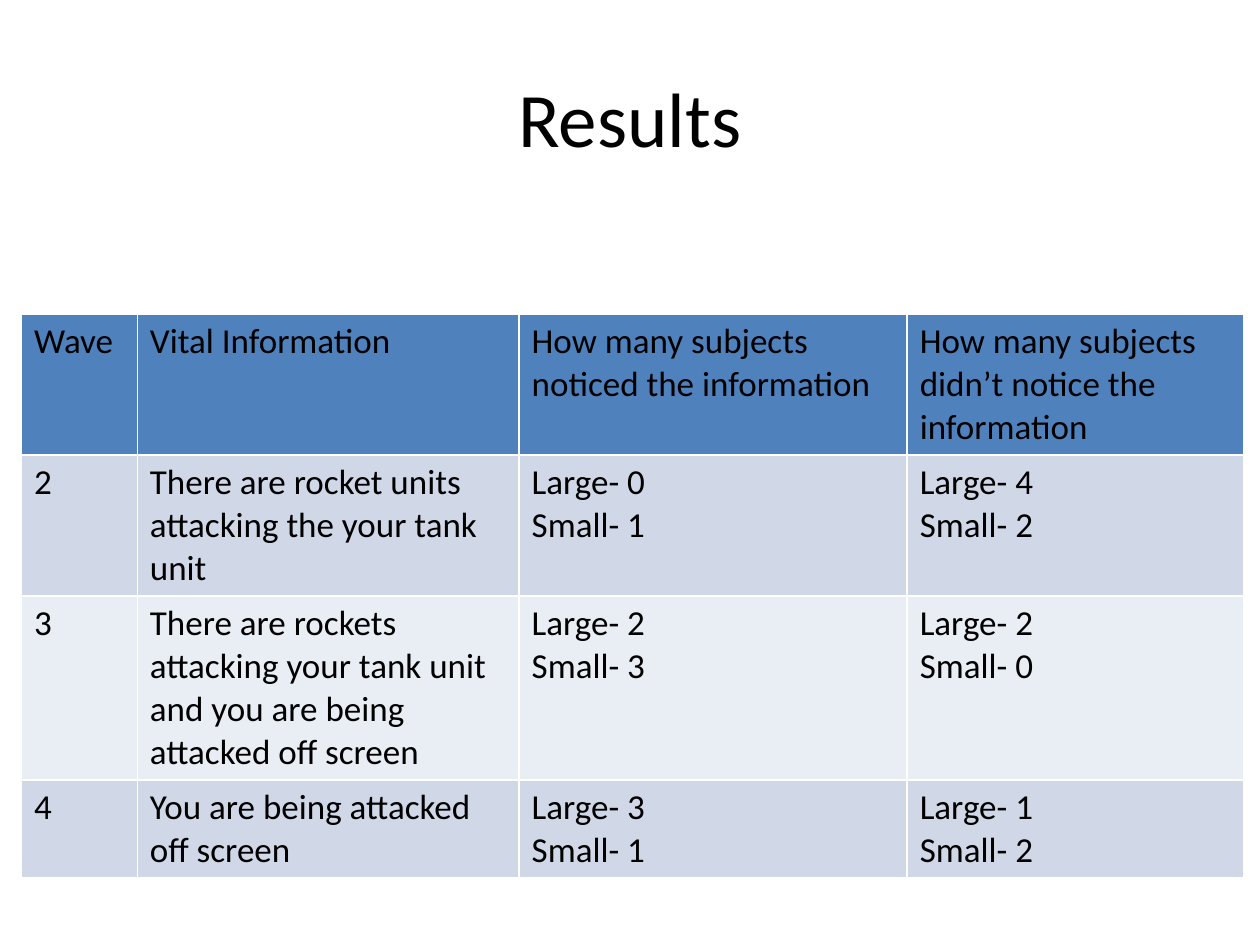
from lxml.etree import SubElement as Sub
from pptx import Presentation
from pptx.dml.color import RGBColor
from pptx.enum.text import MSO_ANCHOR as Anchor, PP_ALIGN as Align
from pptx.oxml.ns import qn
from pptx.util import Inches, Pt

COLS = [0.92, 3.03, 3.08, 2.67]
ROWS = [1.12, 1.12, 1.46, 0.78]
HEAD = "4F81BD"
BANDS = ["D0D8E8", "E9EDF4"]
DATA = [
    ["Wave", "Vital Information", "How many subjects noticed the information",
     "How many subjects didn’t notice the information"],
    ["2", "There are rocket units attacking the your tank unit",
     "Large- 0\nSmall- 1", "Large- 4\nSmall- 2"],
    ["3", "There are rockets attacking your tank unit and you are being attacked off screen",
     "Large- 2\nSmall- 3", "Large- 2\nSmall- 0"],
    ["4", "You are being attacked off screen",
     "Large- 3\nSmall- 1", "Large- 1\nSmall- 2"],
]


def color(code):
    return RGBColor.from_string(code)


def write(frame, text, size=20, align=Align.LEFT, ink="000000"):
    frame.word_wrap = True
    frame.text = text
    for par in frame.paragraphs:
        par.alignment = align
        for run in par.runs:
            font = run.font
            font.name, font.size, font.bold = "Calibri", Pt(size), False
            font.color.rgb = color(ink)


def border(cell, ink="FFFFFF", width=1):
    props = cell._tc.get_or_add_tcPr()
    for side in "LRTB":
        line = Sub(props, qn(f"a:ln{side}"), w=str(Pt(width)))
        fill = Sub(line, qn("a:solidFill"))
        Sub(fill, qn("a:srgbClr"), val=ink)


def title(slide, box, text):
    frame = slide.shapes.add_textbox(*map(Inches, box)).text_frame
    write(frame, text, size=44, align=Align.CENTER)
    frame.vertical_anchor = Anchor.MIDDLE


def grid(slide, box, data):
    table = slide.shapes.add_table(len(data), len(data[0]), *map(Inches, box)).table
    for col, width in zip(table.columns, COLS):
        col.width = Inches(width)
    for r, (row, height) in enumerate(zip(data, ROWS)):
        table.rows[r].height = Inches(height)
        for c, text in enumerate(row):
            cell = table.cell(r, c)
            write(cell.text_frame, text)
            border(cell)
            cell.fill.solid()
            cell.fill.fore_color.rgb = color(BANDS[(r - 1) % 2] if r else HEAD)


def main():
    deck = Presentation()
    deck.slide_width, deck.slide_height = Inches(10), Inches(7.5)
    slide = deck.slides.add_slide(deck.slide_layouts[6])
    title(slide, (0.5, 0.3, 9, 1.25), "Results")
    grid(slide, (0.17, 2.49, sum(COLS), sum(ROWS)), DATA)
    deck.save("out.pptx")


if __name__ == "__main__":
    main()
